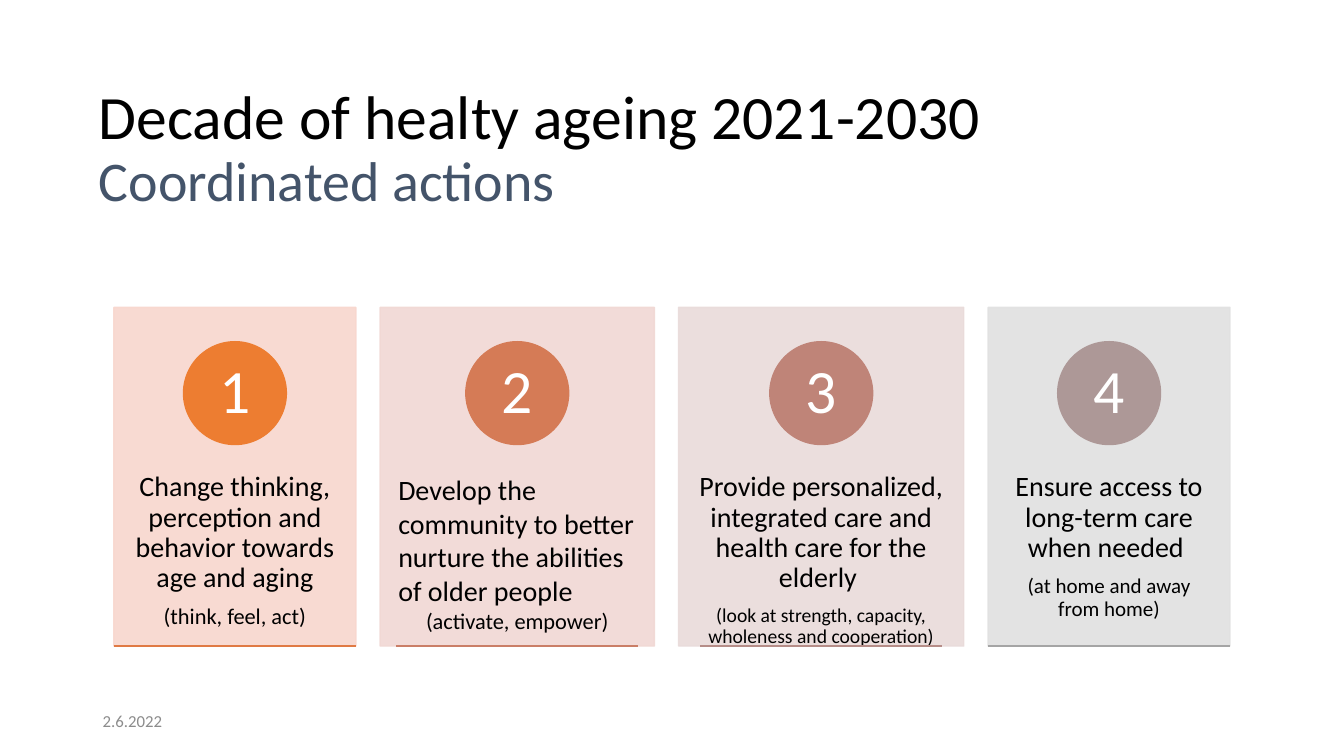
from pptx import Presentation
from pptx.dml.color import RGBColor
from pptx.enum import shapes, text
from pptx.oxml import ns, xmlchemy
from pptx.util import Inches, Pt

FONT = "Calibri"
CENTER, LEFT = text.PP_ALIGN.CENTER, text.PP_ALIGN.LEFT
MIDDLE, TOP = text.MSO_ANCHOR.MIDDLE, text.MSO_ANCHOR.TOP

TITLE = [
    ("Decade of healty ageing 2021-2030", 44, "000000"),
    ("Coordinated actions", 40, "44546A"),
]
DATE = "2.6.2022"

TIGHT = {"alignment": CENTER, "line_spacing": 0.9, "space_after": Pt(8.5)}
LOOSE = {"alignment": CENTER, "line_spacing": 1.0, "space_after": Pt(0)}
LOOSE_LEFT = {**LOOSE, "alignment": LEFT}

ACTIONS = [
    {"width": 2.4, "fill": "F8D7CE", "circle": "ED7D31", "rule": "E07A44",
     "lines": [("Change thinking, perception and behavior towards age and aging", 20, TIGHT),
               ("(think, feel, act)", 16, TIGHT)]},
    {"width": 2.72, "fill": "F1D8D4", "circle": "D57B56", "rule": "CA7E67",
     "lines": [("Develop the community to better nurture the abilities of older people", 20, LOOSE_LEFT),
               ("(activate, empower)", 16, LOOSE)]},
    {"width": 2.83, "fill": "E9DBDA", "circle": "BF8478", "rule": "B68D88",
     "lines": [("Provide personalized, integrated care and health care for the elderly ", 20, TIGHT),
               ("(look at strength, capacity, wholeness and cooperation)", 14, TIGHT)]},
    {"width": 2.4, "fill": "E1E1E1", "circle": "AD9897", "rule": "A5A5A5",
     "lines": [("Ensure access to long-term care when needed ", 20, TIGHT),
               ("(at home and away from home)", 15, TIGHT)]},
]

CARDS_LEFT, CARDS_TOP, CARD_HEIGHT, CARD_GAP = 1.13, 3.05, 3.36, 0.24
CIRCLE_TOP, CIRCLE_SIZE = 3.39, 1.02
TEXT_TOP, TEXT_HEIGHT = 4.33, 2.01
RULE_WIDTH = 2.4


def color(value):
    return RGBColor.from_string(value)


def apply(target, values):
    for name, value in values.items():
        setattr(target, name, value)


def set_frame(frame, anchor, side=0.1, edge=0.05):
    apply(frame, {
        "word_wrap": True, "auto_size": text.MSO_AUTO_SIZE.NONE, "vertical_anchor": anchor,
        "margin_left": Inches(side), "margin_right": Inches(side),
        "margin_top": Inches(edge), "margin_bottom": Inches(edge),
    })


def add_span(para, words, size, value):
    span = para.add_run()
    span.text = words
    apply(span.font, {"name": FONT, "size": Pt(size), "bold": False})
    span.font.color.rgb = color(value)


def add_box(page, left, top, width, height):
    return page.shapes.add_textbox(Inches(left), Inches(top), Inches(width), Inches(height))


def add_filled(page, kind, left, top, width, height, value, opacity=100):
    shape = page.shapes.add_shape(kind, Inches(left), Inches(top), Inches(width), Inches(height))
    shape.shadow.inherit = False
    shape.fill.solid()
    shape.fill.fore_color.rgb = color(value)
    shape.line.color.rgb = color(value)
    shape.line.width = Pt(1)
    if opacity < 100:
        for tone in shape._element.spPr.iter(ns.qn("a:srgbClr")):
            alpha = xmlchemy.OxmlElement("a:alpha")
            alpha.set("val", str(opacity * 1000))
            tone.append(alpha)
    return shape


def add_rule(page, left, top, width, value):
    rule = page.shapes.add_connector(
        shapes.MSO_CONNECTOR.STRAIGHT, Inches(left), Inches(top), Inches(left + width), Inches(top))
    rule.line.color.rgb = color(value)
    rule.line.width = Pt(1)
    rule._element.spPr.append(xmlchemy.OxmlElement("a:effectLst"))


def add_title(page):
    title = page.shapes.title
    apply(title, {"left": Inches(0.88), "top": Inches(0.5),
                  "width": Inches(11.57), "height": Inches(1.98)})
    set_frame(title.text_frame, MIDDLE)
    para = title.text_frame.paragraphs[0]
    apply(para, {"alignment": LEFT, "line_spacing": 0.9})
    for index, (words, size, value) in enumerate(TITLE):
        if index:
            para.add_line_break()
        add_span(para, words, size, value)


def add_action(page, number, left, action):
    width = action["width"]
    add_filled(page, shapes.MSO_SHAPE.RECTANGLE, left, CARDS_TOP, width, CARD_HEIGHT,
               action["fill"], 90)

    frame = add_box(page, left, TEXT_TOP, width, TEXT_HEIGHT).text_frame
    set_frame(frame, TOP, 0.18, 0.36)
    for index, (words, size, layout) in enumerate(action["lines"]):
        para = frame.add_paragraph() if index else frame.paragraphs[0]
        apply(para, layout)
        add_span(para, words, size, "000000")

    circle = add_filled(page, shapes.MSO_SHAPE.OVAL, left + (width - CIRCLE_SIZE) / 2,
                        CIRCLE_TOP, CIRCLE_SIZE, CIRCLE_SIZE, action["circle"])
    set_frame(circle.text_frame, MIDDLE, 0.08, 0.01)
    para = circle.text_frame.paragraphs[0]
    apply(para, {"alignment": CENTER, "line_spacing": 0.9})
    add_span(para, str(number), 44, "FFFFFF")

    add_rule(page, left + (width - RULE_WIDTH) / 2, CARDS_TOP + CARD_HEIGHT, RULE_WIDTH,
             action["rule"])


def main():
    deck = Presentation()
    apply(deck, {"slide_width": Inches(13.33), "slide_height": Inches(7.5)})
    page = deck.slides.add_slide(deck.slide_layouts[5])
    add_title(page)

    left = CARDS_LEFT
    for number, action in enumerate(ACTIONS, 1):
        add_action(page, number, left, action)
        left += action["width"] + CARD_GAP

    date = add_box(page, 0.92, 6.95, 3, 0.4)
    set_frame(date.text_frame, MIDDLE)
    add_span(date.text_frame.paragraphs[0], DATE, 12, "8C8C8C")
    deck.save("out.pptx")


if __name__ == "__main__":
    main()
